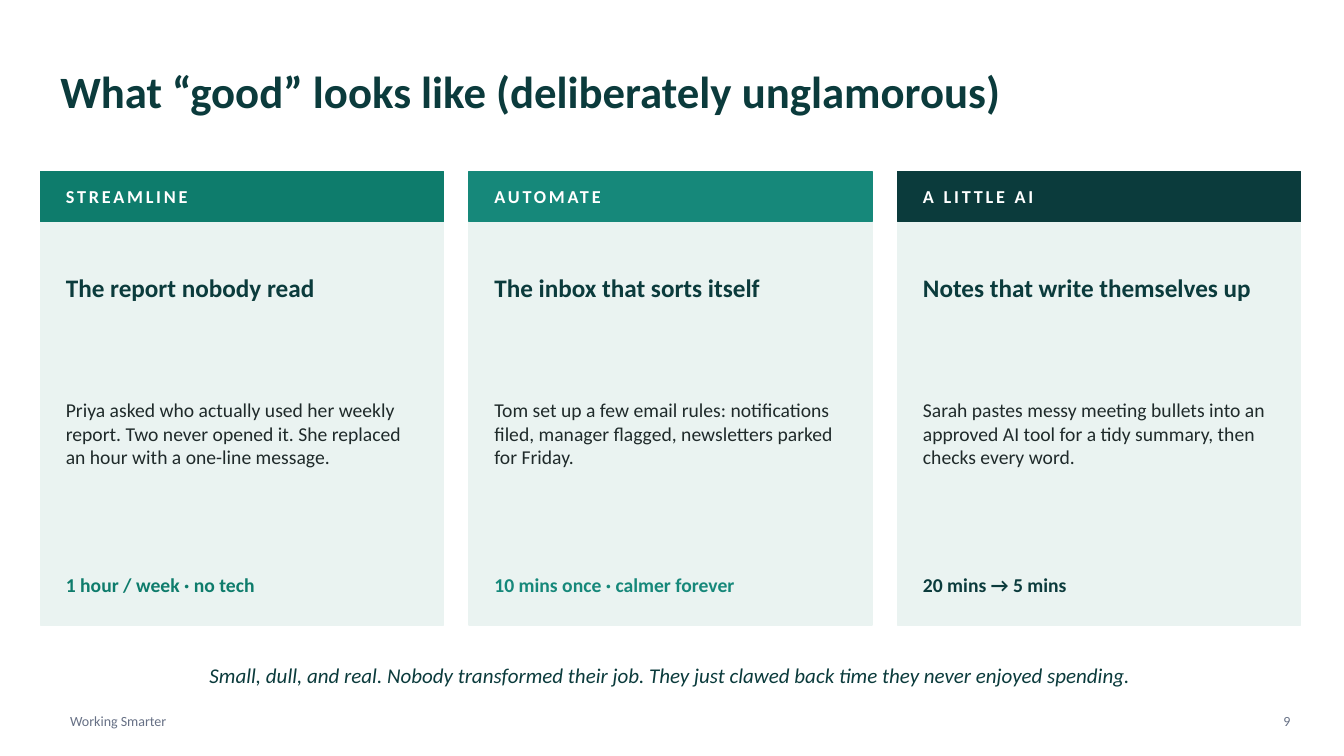
"""Builds the slide of three small, real examples of working smarter."""
from pptx import Presentation
from pptx.dml.color import RGBColor as Rgb
from pptx.enum.shapes import MSO_SHAPE as Preset
from pptx.enum.text import MSO_ANCHOR as Anchor, PP_ALIGN as Align
from pptx.util import Cm, Pt

TITLE = "What “good” looks like (deliberately unglamorous)"
EXAMPLES = [
    ("STREAMLINE", "The report nobody read",
     "Priya asked who actually used her weekly report. Two never opened it. "
     "She replaced an hour with a one-line message.",
     "1 hour / week · no tech", "streamline"),
    ("AUTOMATE", "The inbox that sorts itself",
     "Tom set up a few email rules: notifications filed, manager flagged, "
     "newsletters parked for Friday.",
     "10 mins once · calmer forever", "automate"),
    ("A LITTLE AI", "Notes that write themselves up",
     "Sarah pastes messy meeting bullets into an approved AI tool for a tidy "
     "summary, then checks every word.",
     "20 mins → 5 mins", "deep"),
]
CLOSING = ("Small, dull, and real. Nobody transformed their job. "
           "They just clawed back time they never enjoyed spending.")
FOOTER, PAGE = "Working Smarter", "9"

THEME = {
    "font": "Calibri",
    "colors": {"deep": "0B3B3C", "streamline": "0E7C6C", "automate": "16887A",
               "card": "EAF3F1", "body": "1F2A2A", "muted": "667085",
               "white": "FFFFFF"},
    "styles": {
        "title": {"size": Pt(32), "bold": True},
        "label": {"size": Pt(13), "bold": True},
        "heading": {"size": Pt(18), "bold": True},
        "story": {"size": Pt(14)},
        "saving": {"size": Pt(14), "bold": True},
        "closing": {"size": Pt(15), "italic": True},
        "footer": {"size": Pt(10)},
    },
    "label_spacing": "200",
}

CARD_LEFT, CARD_TOP, CARD_WIDTH, CARD_HEIGHT = 1.02, 4.32, 10.16, 11.43
CARD_PITCH, BAND_HEIGHT = 10.8, 1.27
PAD, COPY_WIDTH = 0.64, 8.89
WIDE_LEFT, WIDE_WIDTH = 1.52, 30.73
FOOTER_TOP, FOOTER_HEIGHT = 17.78, 0.76
NO_INSET = dict.fromkeys(
    ("margin_left", "margin_top", "margin_right", "margin_bottom"), 0)


def color(name):
    return Rgb.from_string(THEME["colors"][name])


def apply(target, values):
    for key, value in values.items():
        setattr(target, key, value)


def add_copy(slide, wording, box, style, ink, align=Align.LEFT, inset=NO_INSET):
    frame = slide.shapes.add_textbox(*map(Cm, box)).text_frame
    apply(frame, {"word_wrap": True, "vertical_anchor": Anchor.MIDDLE, **inset})
    paragraph = frame.paragraphs[0]
    paragraph.alignment = align
    run = paragraph.add_run()
    run.text = wording
    apply(run.font, {"name": THEME["font"], **THEME["styles"][style]})
    run.font.color.rgb = color(ink)
    if style == "label":
        run.font._element.set("spc", THEME["label_spacing"])


def add_block(slide, box, shade):
    block = slide.shapes.add_shape(Preset.RECTANGLE, *map(Cm, box))
    block.shadow.inherit = False
    block.fill.solid()
    block.fill.fore_color.rgb = color(shade)
    block.line.color.rgb = color(shade)
    block.line.width = Pt(1)


def add_example(slide, left, example):
    label, heading, story, saving, accent = example
    add_block(slide, (left, CARD_TOP, CARD_WIDTH, CARD_HEIGHT), "card")
    add_block(slide, (left, CARD_TOP, CARD_WIDTH, BAND_HEIGHT), accent)
    rows = [
        (label, CARD_TOP, BAND_HEIGHT, "label", "white"),
        (heading, 6.22, 2.03, "heading", "deep"),
        (story, 8.38, 5.08, "story", "body"),
        (saving, 14.1, 1.27, "saving", accent),
    ]
    for wording, top, height, style, ink in rows:
        add_copy(slide, wording, (left + PAD, top, COPY_WIDTH, height), style, ink)


def main():
    deck = Presentation()
    apply(deck, {"slide_width": Cm(33.87), "slide_height": Cm(19.05)})
    slide = deck.slides.add_slide(deck.slide_layouts[6])
    slide.background.fill.solid()
    slide.background.fill.fore_color.rgb = color("white")

    add_copy(slide, TITLE, (WIDE_LEFT, 1.14, WIDE_WIDTH, 2.29), "title", "deep")
    for index, example in enumerate(EXAMPLES):
        add_example(slide, CARD_LEFT + index * CARD_PITCH, example)
    add_copy(slide, CLOSING, (WIDE_LEFT, 16.38, WIDE_WIDTH, 1.27),
             "closing", "deep", Align.CENTER)
    add_copy(slide, FOOTER, (WIDE_LEFT, FOOTER_TOP, 10.16, FOOTER_HEIGHT),
             "footer", "muted", inset={})
    add_copy(slide, PAGE, (31.5, FOOTER_TOP, 1.27, FOOTER_HEIGHT),
             "footer", "muted", Align.RIGHT, inset={})
    deck.save("out.pptx")


if __name__ == "__main__":
    main()
